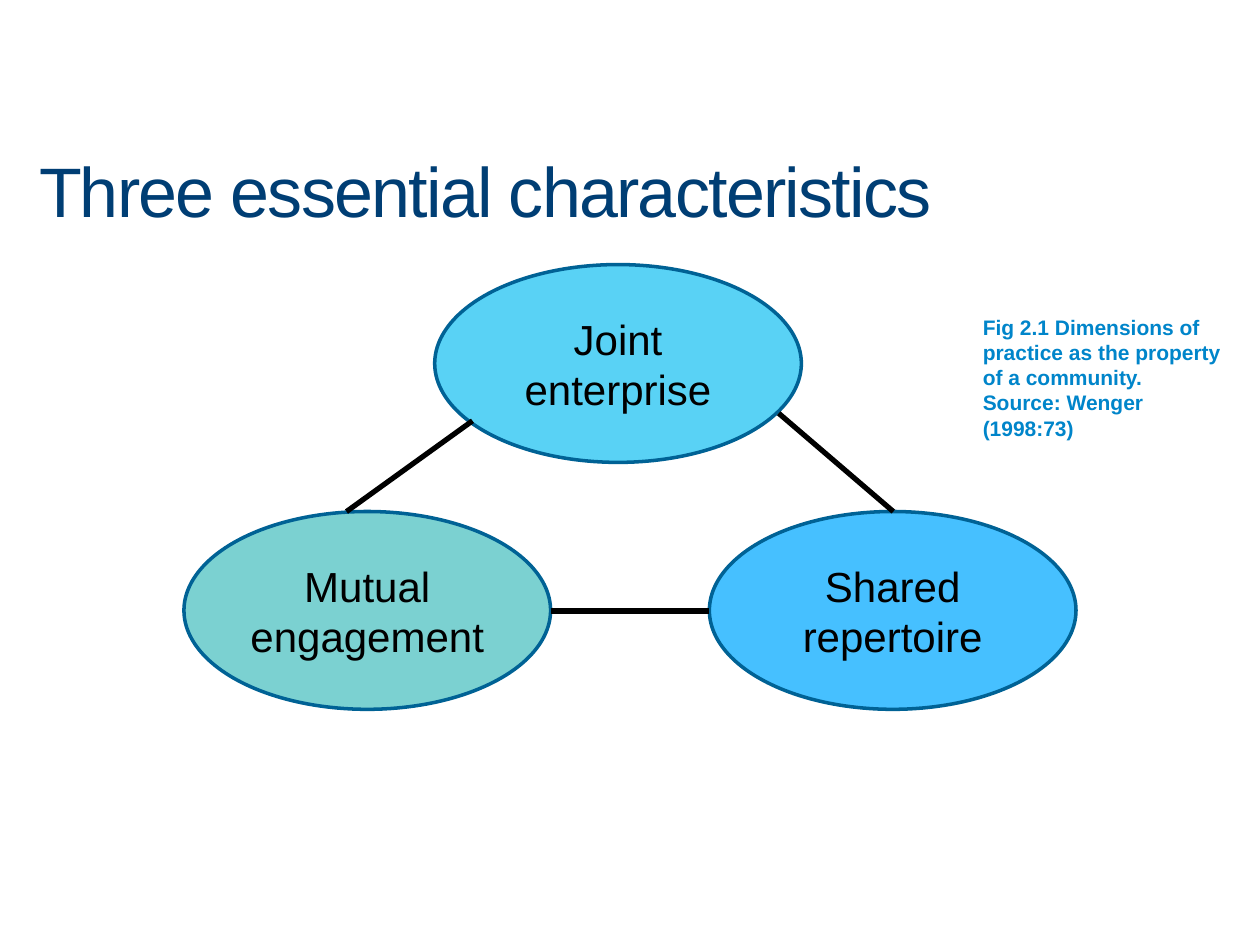
from lxml.etree import SubElement
from pptx import Presentation
from pptx.dml.color import RGBColor
from pptx.enum.shapes import MSO_CONNECTOR, MSO_SHAPE
from pptx.enum.text import MSO_ANCHOR, MSO_AUTO_SIZE, PP_ALIGN
from pptx.oxml.ns import qn
from pptx.util import Inches, Pt

COLORS = {
    "heading": "003E74",
    "caption": "0085CA",
    "outline": "006295",
    "black": "000000",
    "joint": "59D2F5",
    "shared": "46C0FF",
    "mutual": "7BD1D1",
}


def add_text(shape, text, size, color, alignment=PP_ALIGN.LEFT, bold=False):
    paragraph = shape.text_frame.paragraphs[0]
    paragraph.alignment = alignment
    run = paragraph.add_run()
    run.text = text
    run.font.name = "Arial"
    run.font.size = Pt(size)
    run.font.bold = bold
    run.font.color.rgb = RGBColor.from_string(COLORS[color])
    return run


presentation = Presentation()
presentation.slide_width = Inches(10)
presentation.slide_height = Inches(7.5)
slide = presentation.slides.add_slide(presentation.slide_layouts[5])

# Heading
title = slide.shapes.title
title.left, title.top = Inches(0.21), Inches(1.12)
title.width, title.height = Inches(7.6), Inches(0.77)
title.text_frame.vertical_anchor = MSO_ANCHOR.TOP
title.text_frame.auto_size = MSO_AUTO_SIZE.SHAPE_TO_FIT_TEXT
heading = add_text(title, "Three essential characteristics", 40, "heading")
heading.font._element.set("spc", "-100")

# Caption
caption = slide.shapes.add_textbox(Inches(7.8), Inches(1.51), Inches(1.9), Inches(3.12))
frame = caption.text_frame
frame.word_wrap = True
frame.vertical_anchor = MSO_ANCHOR.MIDDLE
frame.margin_left = frame.margin_right = 0
frame.margin_top, frame.margin_bottom = Inches(0.05), Inches(0.2)
add_text(
    caption,
    "Fig 2.1 Dimensions of practice as the property of a community. "
    "Source: Wenger (1998:73)",
    12, "caption", bold=True,
)

# Three characteristics
ellipses = [
    ("Joint enterprise", 3.45, 2.1, "joint"),
    ("Shared repertoire", 5.63, 4.06, "shared"),
    ("Mutual engagement", 1.46, 4.06, "mutual"),
]
for text, left, top, color in ellipses:
    ellipse = slide.shapes.add_shape(
        MSO_SHAPE.OVAL, Inches(left), Inches(top), Inches(2.91), Inches(1.57)
    )
    ellipse.shadow.inherit = False
    ellipse.fill.solid()
    ellipse.fill.fore_color.rgb = RGBColor.from_string(COLORS[color])
    ellipse.line.color.rgb = RGBColor.from_string(COLORS["outline"])
    ellipse.line.width = Pt(2)
    ellipse.text_frame.word_wrap = True
    ellipse.text_frame.vertical_anchor = MSO_ANCHOR.MIDDLE
    add_text(ellipse, text, 24, "black", PP_ALIGN.CENTER)

# Links between the ellipses
links = [
    (6.18, 3.28, 7.09, 4.06),
    (4.37, 4.85, 5.63, 4.85),
    (2.75, 4.06, 3.75, 3.34),
]
for link in links:
    connector = slide.shapes.add_connector(
        MSO_CONNECTOR.STRAIGHT, *[Inches(value) for value in link]
    )
    connector.line.color.rgb = RGBColor.from_string(COLORS["black"])
    connector.line.width = Pt(3)
    SubElement(connector._element.spPr, qn("a:effectLst"))

presentation.save("out.pptx")
